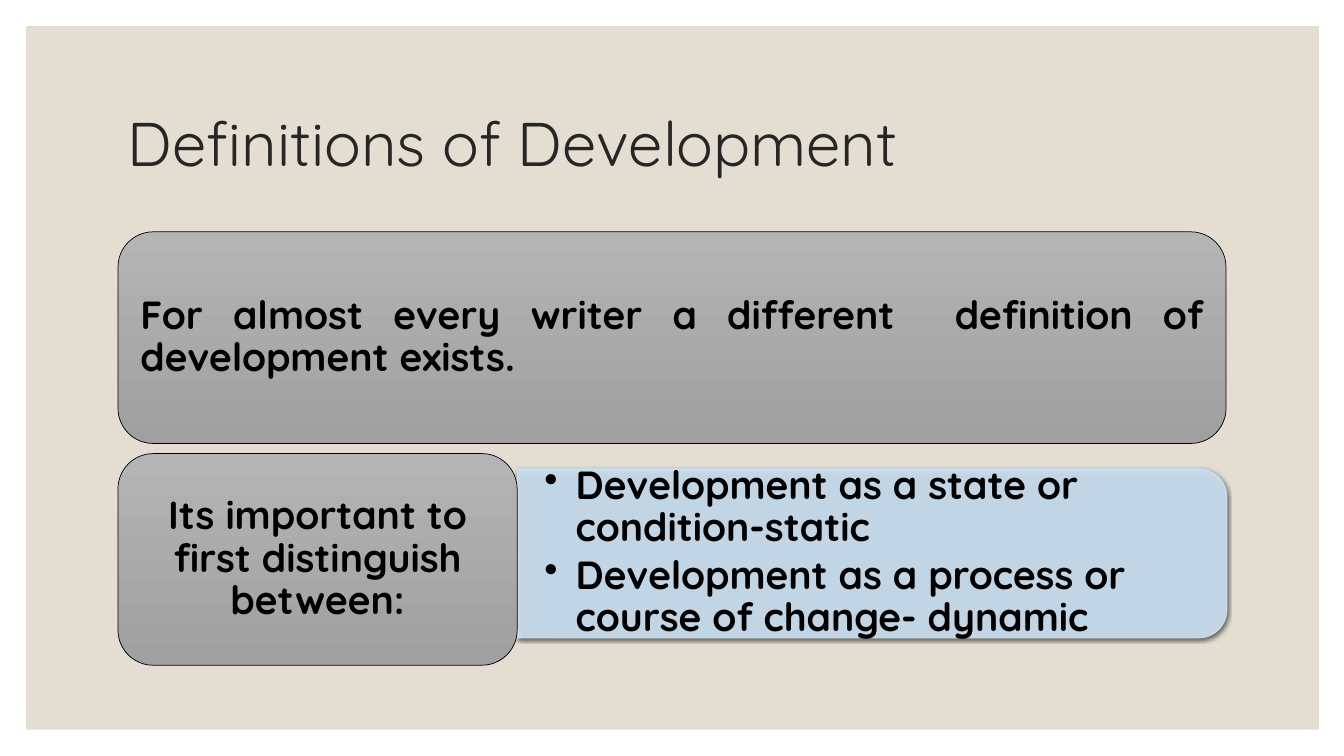
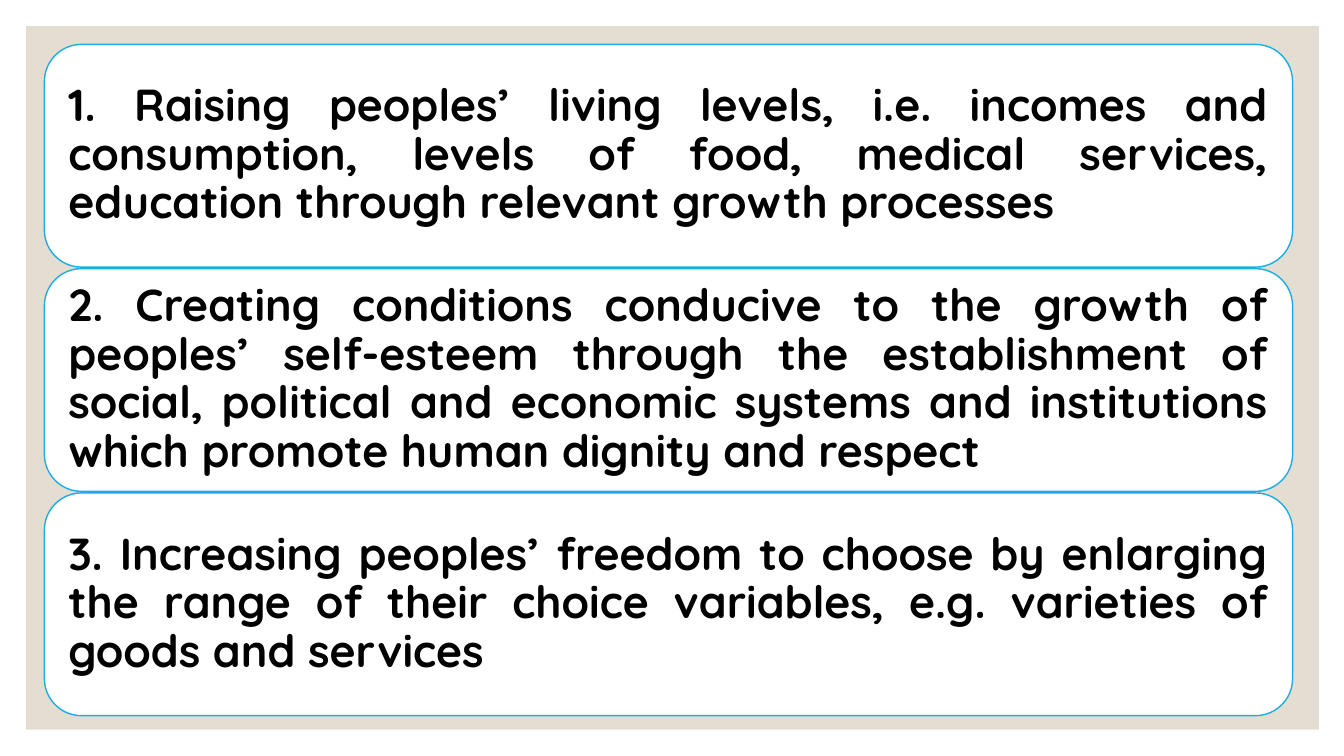
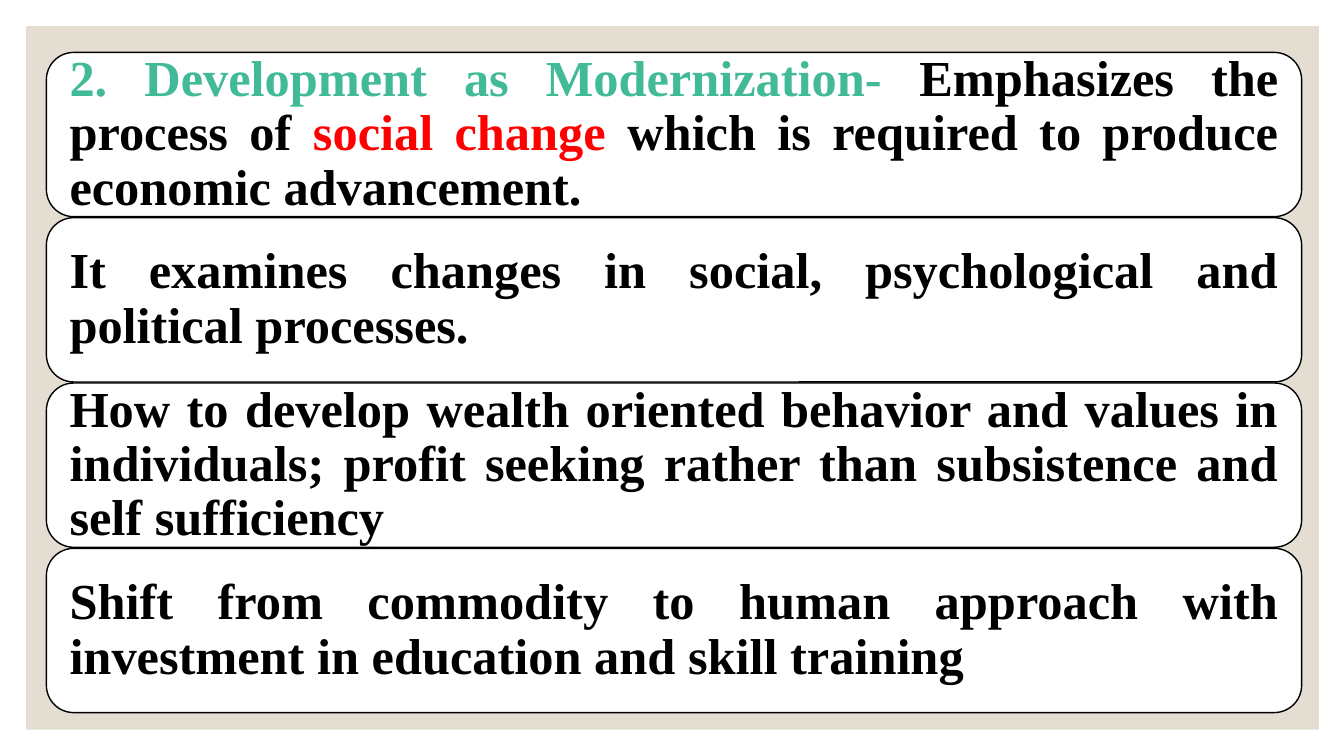
from lxml import etree
from pptx import Presentation
from pptx.dml.color import RGBColor
from pptx.enum.shapes import MSO_SHAPE
from pptx.enum.text import MSO_ANCHOR, PP_ALIGN
from pptx.oxml.ns import qn
from pptx.util import Inches, Pt

RECTANGLE = MSO_SHAPE.RECTANGLE
ROUNDED = MSO_SHAPE.ROUNDED_RECTANGLE
ROUNDED_TOP = MSO_SHAPE.ROUND_2_SAME_RECTANGLE
MIDDLE = MSO_ANCHOR.MIDDLE
LEFT, CENTER, JUSTIFY = PP_ALIGN.LEFT, PP_ALIGN.CENTER, PP_ALIGN.JUSTIFY

SANS, SERIF = "Quicksand", "Times New Roman"
BLACK, WHITE, RED, GREEN = "000000", "FFFFFF", "FF0000", "42BA97"
BEIGE, TITLE_GREY, BORDER_BLUE, PALE_BLUE = "E3DED1", "262626", "1CADE4", "CDE3F5"
GREY_GRADIENT = ("B4B4B4", "A0A0A0")


def rgb(color):
    return RGBColor.from_string(color)


def add_element(parent, tag, **attributes):
    """Append a drawing element such as a:buChar to an XML parent."""
    values = {name: str(value) for name, value in attributes.items()}
    return etree.SubElement(parent, qn(tag), values)


def add_box(slide, kind, area, fill, line=None, line_width=1):
    """Draw a shape; a pair of colours as fill gives a downward gradient."""
    shape = slide.shapes.add_shape(kind, *map(Inches, area))
    shape.shadow.inherit = False
    if isinstance(fill, tuple):
        shape.fill.gradient()
        shape.fill.gradient_angle = 270
        for stop, color in zip(shape.fill.gradient_stops, fill):
            stop.color.rgb = rgb(color)
    else:
        shape.fill.solid()
        shape.fill.fore_color.rgb = rgb(fill)
    if line:
        shape.line.color.rgb = rgb(line)
        shape.line.width = Pt(line_width)
    else:
        shape.line.fill.background()
    return shape


def prepare_frame(shape, inset_x, inset_y=0):
    frame = shape.text_frame
    frame.word_wrap = True
    frame.vertical_anchor = MIDDLE
    frame.margin_left = frame.margin_right = Inches(inset_x)
    frame.margin_top = frame.margin_bottom = Inches(inset_y)
    return frame


def write_paragraph(paragraph, parts, font, size, align=LEFT, bold=True):
    """Fill a paragraph with (text, colour) parts."""
    paragraph.alignment = align
    paragraph.line_spacing = 0.9
    for text, color in parts:
        run = paragraph.add_run()
        run.text = text
        run.font.name = font
        run.font.size = Pt(size)
        run.font.bold = bold
        run.font.color.rgb = rgb(color)


def add_slide(presentation):
    slide = presentation.slides.add_slide(presentation.slide_layouts[6])
    add_box(slide, RECTANGLE, (0.26, 0.26, 12.82, 6.98), BEIGE)
    return slide


def add_title(slide, text):
    box = slide.shapes.add_textbox(Inches(1.17), Inches(0.7), Inches(11), Inches(1.5))
    frame = prepare_frame(box, 0.1, 0.05)
    write_paragraph(frame.paragraphs[0], [(text, TITLE_GREY)], SANS, 44, bold=False)


def add_grey_card(slide, area, text, align):
    card = add_box(slide, ROUNDED, area, GREY_GRADIENT, BLACK, 0.5)
    frame = prepare_frame(card, 0.12, 0.06)
    write_paragraph(frame.paragraphs[0], [(text, BLACK)], SANS, 28, align)


def add_side_panel(slide, left, top, width, height):
    """Draw a translucent panel whose right-hand corners are rounded."""
    turned = (left + (width - height) / 2, top + (height - width) / 2, height, width)
    panel = add_box(slide, ROUNDED_TOP, turned, PALE_BLUE, PALE_BLUE, 0.5)
    panel.rotation = 90
    properties = panel._element.spPr
    for color in properties.findall(".//" + qn("a:srgbClr")):
        add_element(color, "a:alpha", val=90000)
    shadow = add_element(properties.find(qn("a:effectLst")), "a:outerShdw",
                         blurRad=Pt(3), dist=Pt(1), dir=5400000, rotWithShape=0)
    shadow_color = add_element(shadow, "a:srgbClr", val=BLACK)
    add_element(shadow_color, "a:alpha", val=63000)


def add_bullets(slide, area, items):
    frame = prepare_frame(slide.shapes.add_textbox(*map(Inches, area)), 0.27)
    for index, item in enumerate(items):
        paragraph = frame.add_paragraph() if index else frame.paragraphs[0]
        write_paragraph(paragraph, [(item, BLACK)], SANS, 28)
        paragraph.space_after = Pt(4)
        properties = paragraph._p.get_or_add_pPr()
        properties.set("marL", str(Inches(0.31)))
        properties.set("indent", str(Inches(-0.31)))
        add_element(properties, "a:buChar", char="•")


def add_card_stack(slide, first_area, pitch, cards, font, size, border, inset):
    """Stack white cards at an equal pitch, each holding one paragraph."""
    left, top, width, height = first_area
    for index, parts in enumerate(cards):
        area = (left, top + index * pitch, width, height)
        card = add_box(slide, ROUNDED, area, WHITE, border)
        frame = prepare_frame(card, inset)
        write_paragraph(frame.paragraphs[0], parts, font, size, JUSTIFY)


def build_definitions(presentation):
    slide = add_slide(presentation)
    add_title(slide, "Definitions of Development")
    add_grey_card(slide, (1.17, 2.3, 10.99, 2.1),
                  "For almost every writer a different  definition of development exists.",
                  JUSTIFY)
    add_side_panel(slide, 5.13, 4.65, 7.04, 1.68)
    add_bullets(slide, (5.13, 4.73, 6.96, 1.51), [
        "Development as a state or condition-static",
        "Development as a process or course of change- dynamic",
    ])
    add_grey_card(slide, (1.17, 4.5, 3.96, 2.1),
                  "Its important to first distinguish between:", CENTER)


def build_objectives(presentation):
    objectives = [
        "1. Raising peoples’ living levels, i.e. incomes and consumption, levels of "
        "food, medical services, education through relevant growth processes",
        "2. Creating conditions conducive to the growth of peoples’ self-esteem through "
        "the establishment of social, political and economic systems and institutions "
        "which promote human dignity and respect",
        "3. Increasing peoples’ freedom to choose by enlarging the range of their choice "
        "variables, e.g. varieties of goods and services",
    ]
    cards = [[(text, BLACK)] for text in objectives]
    add_card_stack(add_slide(presentation), (0.44, 0.44, 12.38, 2.21), 2.225,
                   cards, SANS, 32, BORDER_BLUE, 0.13)


def build_modernization(presentation):
    cards = [
        [("2. Development as Modernization- ", GREEN),
         ("Emphasizes the process of ", BLACK),
         ("social change ", RED),
         ("which is required to produce economic advancement.", BLACK)],
        [("It examines changes in social, psychological and political processes.", BLACK)],
        [("How to develop wealth oriented behavior and values in individuals; profit "
          "seeking rather than subsistence and self sufficiency", BLACK)],
        [("Shift from commodity to human approach with investment in education and "
          "skill training", BLACK)],
    ]
    add_card_stack(add_slide(presentation), (0.46, 0.52, 12.45, 1.63), 1.64,
                   cards, SERIF, 36, BLACK, 0.15)


def main():
    presentation = Presentation()
    presentation.slide_width = Inches(13.33)
    presentation.slide_height = Inches(7.5)
    build_definitions(presentation)
    build_objectives(presentation)
    build_modernization(presentation)
    presentation.save("out.pptx")


if __name__ == "__main__":
    main()
